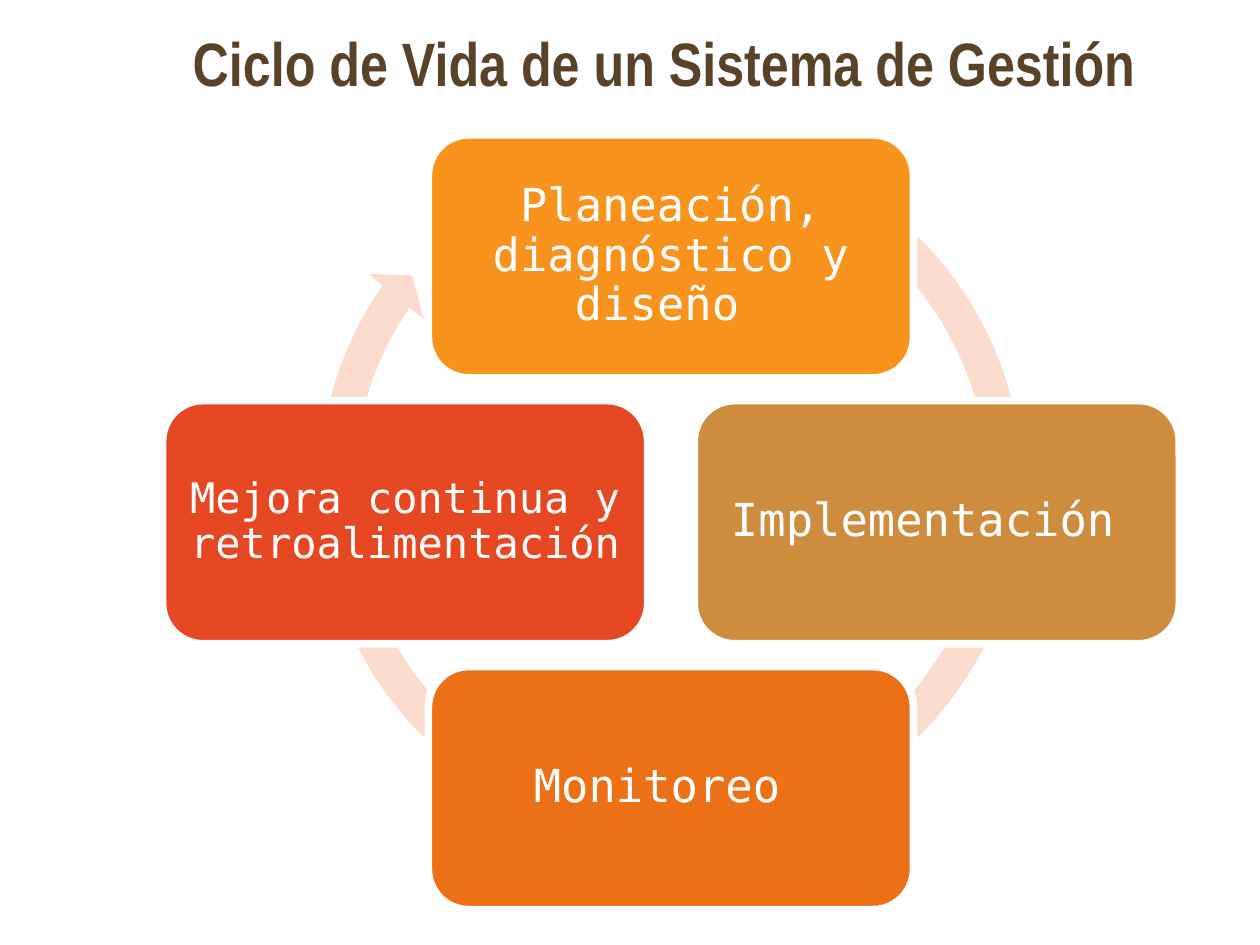
"""Build a slide with the four-step life cycle of a management system."""
from pptx import Presentation
from pptx.dml.color import RGBColor
from pptx.enum.shapes import MSO_SHAPE
from pptx.enum.text import MSO_ANCHOR, MSO_AUTO_SIZE, PP_ALIGN
from pptx.util import Inches, Pt

ARROW = MSO_SHAPE.CIRCULAR_ARROW
ROUND = MSO_SHAPE.ROUNDED_RECTANGLE
CENTER = PP_ALIGN.CENTER
TOP, MIDDLE = MSO_ANCHOR.TOP, MSO_ANCHOR.MIDDLE
NO_FIT = MSO_AUTO_SIZE.NONE


def color(code):
    """Turn a hex string into a colour."""
    return RGBColor.from_string(code)


def write(shape, text, size, font, ink, inset, anchor=MIDDLE, bold=False, lines=1.0, before=0):
    """Put centred text into a shape."""
    frame = shape.text_frame
    frame.word_wrap = True
    frame.auto_size = NO_FIT
    frame.vertical_anchor = anchor
    frame.margin_left = frame.margin_right = Inches(inset)
    frame.margin_top = frame.margin_bottom = Inches(inset)
    para = frame.paragraphs[0]
    para.alignment = CENTER
    para.line_spacing = lines
    para.space_before = Pt(before)
    run = para.add_run()
    run.text = text
    run.font.size = Pt(size)
    run.font.name = font
    run.font.bold = bold
    run.font.color.rgb = color(ink)


deck = Presentation()
deck.slide_width, deck.slide_height = Inches(10), Inches(7.5)
slide = deck.slides.add_slide(deck.slide_layouts[5])

title = slide.shapes.title
title.left, title.top = Inches(0.83), Inches(0.15)
title.width, title.height = Inches(9), Inches(1.31)
write(title, "Ciclo de Vida de un Sistema de Gestión ", 35, "Arial Narrow", "594228",
      0.05, anchor=TOP, bold=True)

ring = slide.shapes.add_shape(ARROW, Inches(2.39), Inches(0.93), Inches(5.87), Inches(5.87))
ring.shadow.inherit = False
ring.fill.solid()
ring.fill.fore_color.rgb = color("FCDCCD")
ring.line.fill.background()
for index, value in enumerate([0.047, 2.729, 128.832, 179.956, 0.048]):
    ring.adjustments[index] = value

mid_x, mid_y, step = 5.325, 4.145, 2.11
wide, high = 3.85, 1.93
steps = [
    ("Planeación, diagnóstico y diseño ", 0, -1, "F8931D", 26, 0.11),
    ("Implementación ", 1, 0, "CE8D3E", 26, 0.11),
    ("Monitoreo ", 0, 1, "EC7016", 26, 0.11),
    ("Mejora continua y retroalimentación ", -1, 0, "E64823", 24, 0.1),
]
for text, col, row, fill, size, inset in steps:
    left = mid_x + col * step - wide / 2
    top = mid_y + row * step - high / 2
    box = slide.shapes.add_shape(ROUND, Inches(left), Inches(top), Inches(wide), Inches(high))
    box.shadow.inherit = False
    box.fill.solid()
    box.fill.fore_color.rgb = color(fill)
    box.line.color.rgb = color("FFFFFF")
    box.line.width = Pt(4.33)
    write(box, text, size, "DejaVu Sans Mono", "FFFFFF", inset, lines=0.9)

deck.save("out.pptx")
